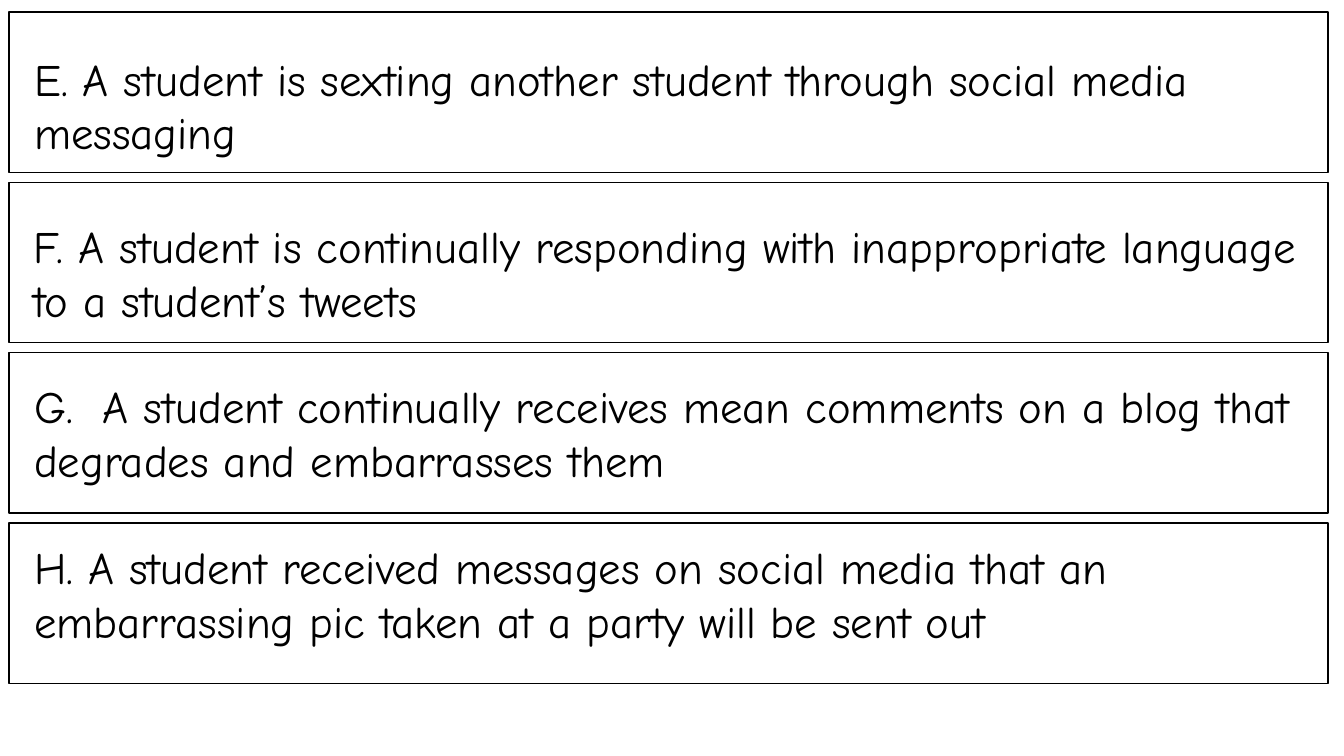
from pptx import Presentation
from pptx.dml.color import RGBColor
from pptx.enum.shapes import MSO_SHAPE
from pptx.enum.text import MSO_ANCHOR, MSO_AUTO_SIZE, PP_ALIGN
from pptx.util import Inches, Pt

RECT = MSO_SHAPE.RECTANGLE
TOP = MSO_ANCHOR.TOP
GROW = MSO_AUTO_SIZE.SHAPE_TO_FIT_TEXT
LEFT = PP_ALIGN.LEFT
BLACK = RGBColor(0, 0, 0)
WHITE = RGBColor(255, 255, 255)
FONT = "Comic Neue"

# Content: wording, then left, drop from card top, width and height of its text
CARDS = [
    ("E. A student is sexting another student through social media messaging",
     0.24, 0.34, 12.76, 1.18),
    ("F. A student is continually responding with inappropriate language "
     "to a student’s tweets",
     0.23, 0.31, 13.08, 1.18),
    ("G.  A student continually receives mean comments on a blog that "
     "degrades and embarrasses them",
     0.24, 0.21, 12.76, 1.18),
    ("H. A student received messages on social media that an "
     "embarrassing pic taken at a party will be sent out",
     0.24, 0.12, 12.66, 1.78),
]

# Grid: one column of equal cards
WIDE, HIGH = 13.33, 7.5
EDGE, START, PITCH = 0.09, 0.12, 1.69
CARD_W, CARD_H = 13.08, 1.59


def add_card(slide, top):
    card = slide.shapes.add_shape(
        RECT, Inches(EDGE), Inches(top), Inches(CARD_W), Inches(CARD_H))
    card.shadow.inherit = False
    card.fill.solid()
    card.fill.fore_color.rgb = WHITE
    card.line.color.rgb = BLACK
    card.line.width = Pt(1)


def add_text(slide, words, left, top, width, height):
    box = slide.shapes.add_textbox(
        Inches(left), Inches(top), Inches(width), Inches(height))
    frame = box.text_frame
    frame.word_wrap = True
    frame.auto_size = GROW
    frame.vertical_anchor = TOP
    para = frame.paragraphs[0]
    para.alignment = LEFT
    run = para.add_run()
    run.text = words
    run.font.name = FONT
    run.font.size = Pt(32)
    run.font.color.rgb = BLACK


def main():
    deck = Presentation()
    deck.slide_width, deck.slide_height = Inches(WIDE), Inches(HIGH)
    slide = deck.slides.add_slide(deck.slide_layouts[6])

    # Each card with its scenario
    for row, (words, left, drop, width, height) in enumerate(CARDS):
        top = START + row * PITCH
        add_card(slide, top)
        add_text(slide, words, left, top + drop, width, height)

    deck.save("out.pptx")


if __name__ == "__main__":
    main()
